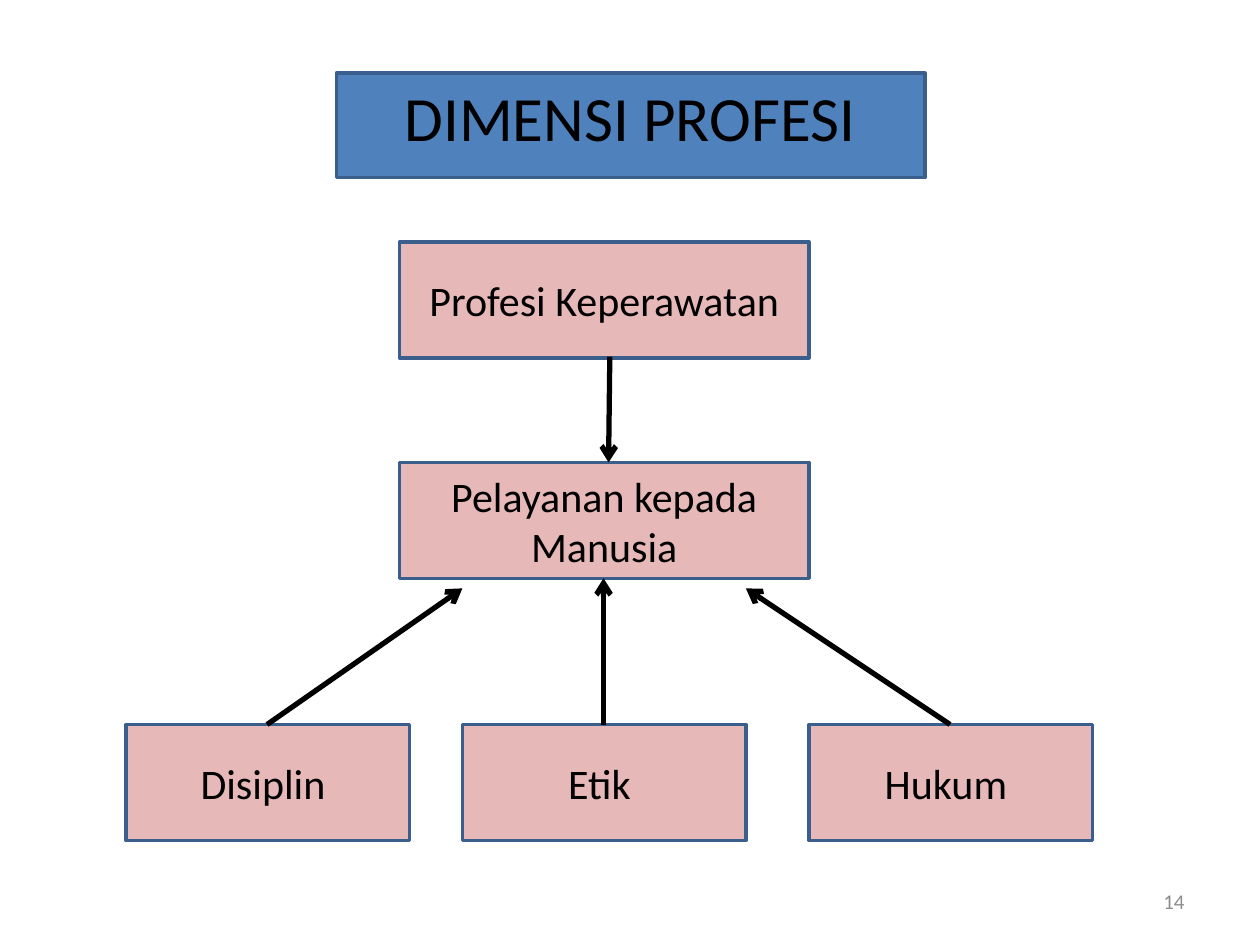
"""Build the slide on the dimensions of the nursing profession."""
from lxml import etree
from pptx import Presentation
from pptx.dml.color import RGBColor
from pptx.enum.shapes import MSO_CONNECTOR, MSO_SHAPE
from pptx.enum.text import MSO_ANCHOR, PP_ALIGN
from pptx.oxml.ns import qn
from pptx.util import Inches, Pt

RECTANGLE = MSO_SHAPE.RECTANGLE
STRAIGHT = MSO_CONNECTOR.STRAIGHT
MIDDLE = MSO_ANCHOR.MIDDLE
CENTER, RIGHT = PP_ALIGN.CENTER, PP_ALIGN.RIGHT

BLACK = RGBColor(0x00, 0x00, 0x00)
GRAY = RGBColor(0x8C, 0x8C, 0x8C)
BLUE = RGBColor(0x4F, 0x81, 0xBD)
DARK_BLUE = RGBColor(0x3A, 0x5F, 0x8C)
PINK = RGBColor(0xE6, 0xB9, 0xB8)

BOX_HEIGHT = 0.92
DIMENSION_TOP = 5.75
DIMENSION_WIDTH = 2.25


def write(shape, text, size, color, alignment):
    frame = shape.text_frame
    frame.word_wrap = True
    frame.vertical_anchor = MIDDLE
    para = frame.paragraphs[0]
    para.text = text
    para.alignment = alignment
    para.font.name = "Calibri"
    para.font.size = Pt(size)
    para.font.color.rgb = color


def add_box(left, top, width, height, fill):
    box = page.shapes.add_shape(
        RECTANGLE, Inches(left), Inches(top), Inches(width), Inches(height))
    box.shadow.inherit = False
    box.fill.solid()
    box.fill.fore_color.rgb = fill
    box.line.color.rgb = DARK_BLUE
    box.line.width = Pt(2)
    return box


deck = Presentation()
deck.slide_width, deck.slide_height = Inches(10), Inches(7.5)
page = deck.slides.add_slide(deck.slide_layouts[5])

title = page.shapes.title
title.left, title.top = Inches(0.5), Inches(0.3)
title.width, title.height = Inches(9), Inches(1.25)
write(title, "DIMENSI PROFESI", 36, BLACK, CENTER)
banner = add_box(2.67, 0.58, 4.67, 0.83, BLUE)
title.element.addprevious(banner.element)

number = page.shapes.add_textbox(
    Inches(7.17), Inches(6.95), Inches(2.33), Inches(0.4))
write(number, "14", 12, GRAY, RIGHT)

boxes = [
    ("Profesi Keperawatan", 3.17, 1.92, 3.25),
    ("Pelayanan kepada Manusia", 3.17, 3.67, 3.25),
    ("Disiplin ", 1, DIMENSION_TOP, DIMENSION_WIDTH),
    ("Etik ", 3.67, DIMENSION_TOP, DIMENSION_WIDTH),
    ("Hukum ", 6.42, DIMENSION_TOP, DIMENSION_WIDTH),
]
for text, left, top, width in boxes:
    write(add_box(left, top, width, BOX_HEIGHT, PINK), text, 24, BLACK, CENTER)

arrows = [
    (4.84, 2.83, 4.83, 3.67),
    (4.79, DIMENSION_TOP, 4.79, 4.59),
    (2.12, DIMENSION_TOP, 3.67, 4.67),
    (7.54, DIMENSION_TOP, 5.92, 4.67),
]
for ends in arrows:
    arrow = page.shapes.add_connector(STRAIGHT, *map(Inches, ends))
    arrow.line.color.rgb = BLACK
    arrow.line.width = Pt(3)
    properties = arrow.element.spPr
    etree.SubElement(properties.find(qn("a:ln")), qn("a:tailEnd"), type="arrow")
    etree.SubElement(properties, qn("a:effectLst"))

deck.save("out.pptx")
